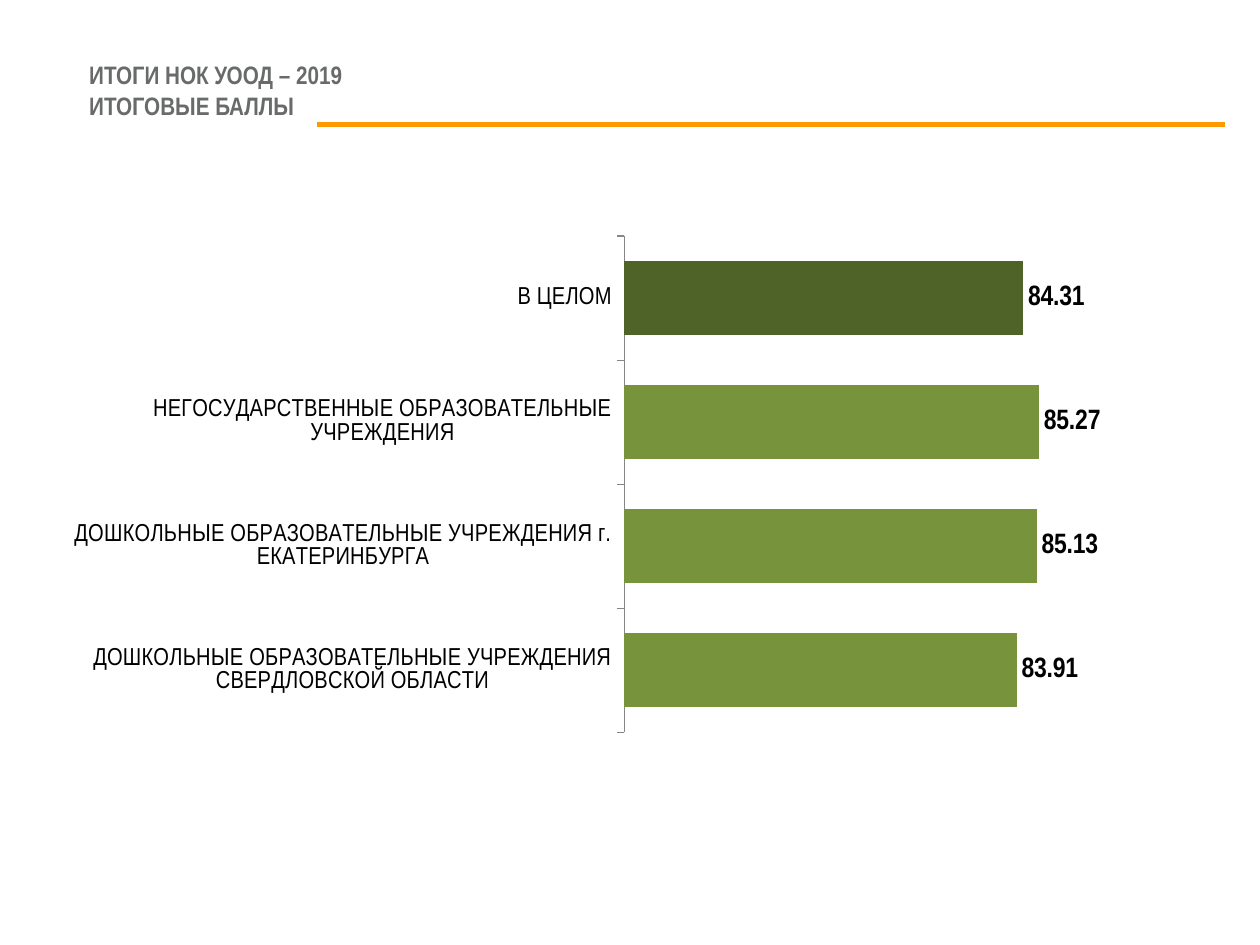
import pptx
import pptx.chart.data
import pptx.dml.color
import pptx.enum.chart
import pptx.enum.shapes
import pptx.enum.text
import pptx.oxml
import pptx.oxml.ns
import pptx.util

FONT = "Arial Narrow"
TITLE = "ИТОГИ НОК УООД – 2019\vИТОГОВЫЕ БАЛЛЫ"
SCORES = [
    ("В ЦЕЛОМ", 84.31),
    ("НЕГОСУДАРСТВЕННЫЕ ОБРАЗОВАТЕЛЬНЫЕ УЧРЕЖДЕНИЯ", 85.27),
    ("ДОШКОЛЬНЫЕ ОБРАЗОВАТЕЛЬНЫЕ УЧРЕЖДЕНИЯ г. ЕКАТЕРИНБУРГА", 85.13),
    ("ДОШКОЛЬНЫЕ ОБРАЗОВАТЕЛЬНЫЕ УЧРЕЖДЕНИЯ СВЕРДЛОВСКОЙ ОБЛАСТИ", 83.91),
]
PLOT_SHARES = {"x": 0.441, "y": 0.059, "w": 0.527, "h": 0.914}
TITLE_BOX = (0.61, 0.43, 9, 0.57)
CHART_BOX = (0.59, 1.62, 9.89, 4.31)
RULE = (2.52, 0.99, 9.72, 0.99)


def color(value):
    return pptx.dml.color.RGBColor.from_string(value)


def inches(values):
    return [pptx.util.Inches(value) for value in values]


def style_font(font, size, value, bold=False):
    font.name = FONT
    font.size = pptx.util.Pt(size)
    font.bold = bold
    font.color.rgb = color(value)


def fill(chart_part, value):
    chart_part.format.fill.solid()
    chart_part.format.fill.fore_color.rgb = color(value)


def add_title(slide):
    frame = slide.shapes.add_textbox(*inches(TITLE_BOX)).text_frame
    frame.word_wrap = True
    frame.vertical_anchor = pptx.enum.text.MSO_ANCHOR.MIDDLE
    frame.text = TITLE
    for run in frame.paragraphs[0].runs:
        style_font(run.font, 14.4, "696B6B", bold=True)


def add_rule(slide):
    rule = slide.shapes.add_connector(
        pptx.enum.shapes.MSO_CONNECTOR.STRAIGHT, *inches(RULE))
    rule.line.color.rgb = color("FF9900")
    rule.line.width = pptx.util.Pt(3)
    properties = rule._element.spPr
    properties.append(pptx.oxml.parse_xml(
        f"<a:effectLst {pptx.oxml.ns.nsdecls('a')}/>"))


def set_plot_layout(chart):
    settings = {"layoutTarget": "inner", "xMode": "edge", "yMode": "edge", **PLOT_SHARES}
    items = "".join(f'<c:{name} val="{value}"/>' for name, value in settings.items())
    layout = pptx.oxml.parse_xml(
        f"<c:layout {pptx.oxml.ns.nsdecls('c')}>"
        f"<c:manualLayout>{items}</c:manualLayout></c:layout>")
    plot_area = chart._chartSpace.chart.plotArea
    for old_layout in plot_area.findall(pptx.oxml.ns.qn("c:layout")):
        plot_area.remove(old_layout)
    plot_area.insert(0, layout)


def add_score_chart(slide):
    data = pptx.chart.data.CategoryChartData(number_format="#,##0.00")
    data.categories = [name for name, score in SCORES]
    data.add_series("Series 1", [score for name, score in SCORES])
    chart = slide.shapes.add_chart(
        pptx.enum.chart.XL_CHART_TYPE.BAR_CLUSTERED, *inches(CHART_BOX), data).chart
    chart.has_title = False
    chart.has_legend = False
    style_font(chart.font, 14, "000000")
    set_plot_layout(chart)

    # Axes
    category_axis = chart.category_axis
    category_axis.reverse_order = True
    category_axis.major_tick_mark = pptx.enum.chart.XL_TICK_MARK.OUTSIDE
    category_axis.format.line.color.rgb = color("868686")
    category_axis.format.line.width = pptx.util.Pt(0.75)
    value_axis = chart.value_axis
    value_axis.minimum_scale, value_axis.maximum_scale = 60, 100
    value_axis.major_unit = 10
    value_axis.has_major_gridlines = False
    value_axis.visible = False

    # Bars, with the overall score darker
    plot = chart.plots[0]
    plot.vary_by_categories = False
    plot.gap_width = 68
    series = plot.series[0]
    fill(series, "77933C")
    fill(series.points[0], "4F6228")

    # Value labels
    labels = series.data_labels
    labels.show_value = True
    labels.number_format = "#,##0.00"
    labels.number_format_is_linked = False
    labels.position = pptx.enum.chart.XL_LABEL_POSITION.OUTSIDE_END
    style_font(labels.font, 16, "000000", bold=True)


def main():
    presentation = pptx.Presentation()
    presentation.slide_width, presentation.slide_height = inches((10, 7.5))
    slide = presentation.slides.add_slide(presentation.slide_layouts[6])
    add_title(slide)
    add_rule(slide)
    add_score_chart(slide)
    presentation.save("out.pptx")


if __name__ == "__main__":
    main()
